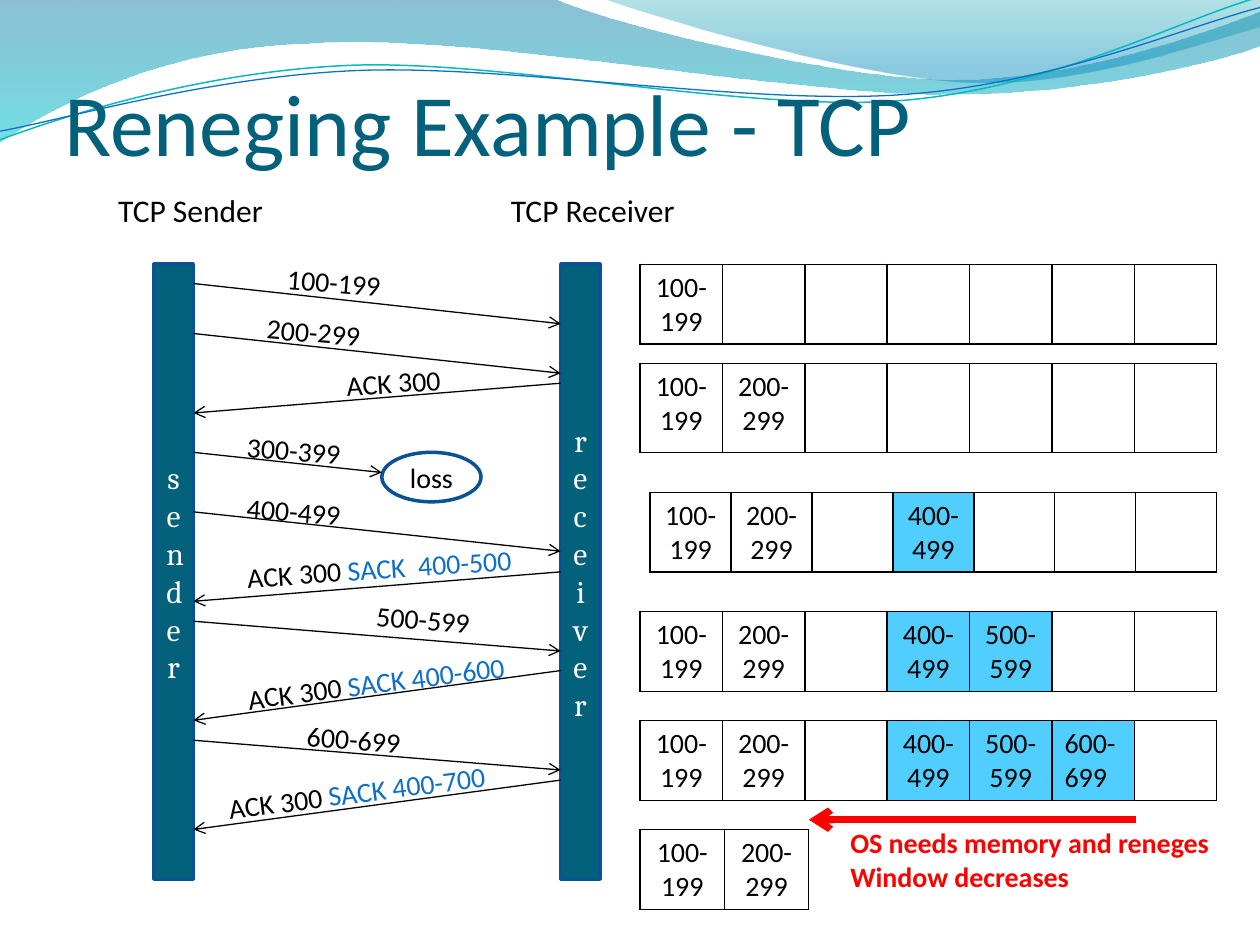
from lxml.etree import SubElement
from pptx import Presentation
from pptx.dml.color import RGBColor
from pptx.enum.shapes import MSO_CONNECTOR, MSO_SHAPE
from pptx.enum.text import MSO_ANCHOR, MSO_AUTO_SIZE, PP_ALIGN
from pptx.oxml.ns import qn
from pptx.util import Pt

THEME = {
    "font": "Calibri", "bar_font": "Cambria",
    "title_size": 50, "size": 18, "small": 16,
    "teal": "04617B", "edge": "0B5292", "black": "000000", "white": "FFFFFF",
    "sack": "0F6FC6", "held": "4FCEFF", "alert": "FF0000",
}

# Waves: start point, then 2-tuples for straight lines and 6-tuples for curves
WAVE_FILLS = [
    ((-0.7, -0.7), [(316.8, -0.7), (342.7, 12.2, 478.1, 45.4, 545.8, 45.4),
                    (614.2, 45.4, 689.8, 18.7, 720, 6.5), (720.7, 25.9),
                    (707.8, 31.7, 626.4, 54.7, 537.1, 54),
                    (447.8, 54, 275, 20.2, 185, 24.5),
                    (92.9, 25.9, 33.1, 59.8, -0.7, 81.4)],
     [(0, "0074A1", 45), (1, "00C6CF", 55)]),
    ((344.9, -0.7), [(366.5, 7.9, 491, 44.6, 553.7, 46.8),
                     (616.3, 49.7, 691.9, 23, 720, 15.1), (720, 0)],
     [(0, "00A1A9", 30), (0.8, "008BBF", 45)]),
]
WAVE_LINES = [
    ((0, 79.9), [(34.6, 67, 113.8, 41, 199.4, 37.4),
                 (284.4, 33.8, 427, 64.1, 513.4, 57.6),
                 (599.8, 51.1, 675.4, 10.8, 718.6, -1.4)], "0AB8BF", 0.85),
    ((0, 74.9), [(33.8, 69.1, 118.1, 43.9, 203.8, 40.3),
                 (290.2, 36.7, 429.8, 60.5, 516.2, 54),
                 (601.9, 48.2, 677.5, 15.1, 720, 4.3)], "0F6FC6", 0.75),
]

BAR_TOP, BAR_WIDTH, BAR_HEIGHT = 151, 22.5, 351.5
SENDER_LEFT, RECEIVER_LEFT = 88, 320.4
LOSS_BOX = (218.2, 258.5, 56.7, 28.3)

# Start y, end y, label, SACK part, label left, top, width, rotation
DATA, ACK, STEEP = 4.6, -3.9, -7.3
MESSAGES = [
    (162, 185, "100-199", "", 157, 148.5, 85, DATA),
    (190.6, 213.3, "200-299", "", 145.4, 177, 85, DATA),
    (219, 236, "ACK 300", "", 190.8, 204.7, 85, ACK),
    (258.5, 270, "300-399", "", 134, 244.8, 85, DATA),
    (292.5, 315, "400-499", "", 134, 279.4, 85, DATA),
    (326.8, 343.6, "ACK 300 ", "SACK  400-500", 134, 310.5, 193.7, ACK),
    (355, 372, "500-599", "", 208, 341.3, 85, DATA),
    (383.2, 411.6, "ACK 300 ", "SACK 400-600", 134, 376.6, 166.3, STEEP),
    (423, 440, "600-699", "", 168.3, 409.7, 85, DATA),
    (445.8, 474, "ACK 300 ", "SACK 400-700", 123, 439.2, 166.3, STEEP),
]
LOST = "300-399"

# Receive buffers: left, top, width, row height, slots, {slot: segment}
FIRST_TWO = {0: "100-199", 1: "200-299"}
BUFFERS = [
    (365.8, 151, 329.4, 45.4, 7, {0: "100-199"}),
    (365.8, 207.6, 329.4, 51, 7, FIRST_TWO),
    (371.5, 281.3, 323.7, 45.4, 7, {**FIRST_TWO, 3: "400-499"}),
    (365.8, 349.4, 329.4, 45.4, 7, {**FIRST_TWO, 3: "400-499", 4: "500-599"}),
    (365.8, 411.8, 329.4, 45.4, 7,
     {**FIRST_TWO, 3: "400-499", 4: "500-599", 5: "600-699"}),
    (365.8, 474, 96.3, 45.4, 2, FIRST_TWO),
]
NOTE = ["OS needs memory and reneges", "Window decreases"]


def color(name):
    return RGBColor.from_string(THEME.get(name, name))


def add_run(paragraph, text, tint="black", size="small", font="font", bold=False):
    run = paragraph.add_run()
    run.text = text
    run.font.name, run.font.size = THEME[font], Pt(THEME[size])
    run.font.color.rgb, run.font.bold = color(tint), bold


def place(shape, left, top, width, height):
    shape.left, shape.top, shape.width, shape.height = map(Pt, (left, top, width, height))


def add_wave(shapes, start, parts, closed):
    """Join the end points, then bend the segments that have control points."""
    builder = shapes.build_freeform(Pt(start[0]), Pt(start[1]))
    builder.add_line_segments([(Pt(part[-2]), Pt(part[-1])) for part in parts], close=closed)
    wave = builder.convert_to_shape()
    wave.shadow.inherit = False
    segments = list(wave.element.spPr.iter(qn("a:lnTo")))
    for segment, part in zip(segments, parts):
        if len(part) == 6:
            segment.tag = qn("a:cubicBezTo")
            for index, (x, y) in enumerate((part[:2], part[2:4])):
                control = segment.makeelement(
                    qn("a:pt"), x=str(Pt(x) - wave.left), y=str(Pt(y) - wave.top))
                segment.insert(index, control)
    return wave


def add_arrow(shapes, x1, y1, x2, y2, tint="black", weight=0.75):
    arrow = shapes.add_connector(MSO_CONNECTOR.STRAIGHT, *map(Pt, (x1, y1, x2, y2)))
    arrow.line.color.rgb, arrow.line.width = color(tint), Pt(weight)
    SubElement(arrow.line._get_or_add_ln(), qn("a:tailEnd"), type="arrow")
    SubElement(arrow.element.spPr, qn("a:effectLst"))


def add_node(shapes, kind, box, text, fill, **style):
    node = shapes.add_shape(kind, *map(Pt, box))
    node.shadow.inherit = False
    node.fill.solid()
    node.fill.fore_color.rgb = color(fill)
    node.line.color.rgb, node.line.width = color("edge"), Pt(2)
    frame = node.text_frame
    frame.word_wrap, frame.vertical_anchor = True, MSO_ANCHOR.MIDDLE
    frame.paragraphs[0].alignment = PP_ALIGN.CENTER
    add_run(frame.paragraphs[0], text, **style)


def add_text_box(shapes, *box):
    text_box = shapes.add_textbox(*map(Pt, box))
    text_box.text_frame.word_wrap = True
    return text_box


def add_buffer(shapes, left, top, width, height, slots, segments):
    table = shapes.add_table(1, slots, *map(Pt, (left, top, width, height))).table
    table.first_row = table.horz_banding = False
    for slot in range(slots):
        table.columns[slot].width = Pt(width / slots)
        cell = table.cell(0, slot)
        properties = cell._tc.get_or_add_tcPr()
        for side in ("a:lnL", "a:lnR", "a:lnT", "a:lnB"):
            border = SubElement(properties, qn(side), w=str(Pt(1)))
            SubElement(SubElement(border, qn("a:solidFill")), qn("a:srgbClr"), val=THEME["black"])
        if slot >= 3 and slot in segments:
            cell.fill.solid()
            cell.fill.fore_color.rgb = color("held")
        else:
            cell.fill.background()
        if slot in segments:
            paragraph = cell.text_frame.paragraphs[0]
            paragraph.alignment = PP_ALIGN.LEFT if slot == 5 else PP_ALIGN.CENTER
            add_run(paragraph, segments[slot])


def main():
    presentation = Presentation()
    presentation.slide_width, presentation.slide_height = Pt(720), Pt(540)
    slide = presentation.slides.add_slide(presentation.slide_layouts[1])
    shapes = slide.shapes
    title, body = shapes.title, slide.placeholders[1]

    # Wave decoration
    for start, parts, stops in WAVE_FILLS:
        wave = add_wave(shapes, start, parts, True)
        wave.line.fill.background()
        wave.fill.gradient()
        wave.fill.gradient_angle = 270
        for stop, (position, tint, _) in zip(wave.fill.gradient_stops, stops):
            stop.position, stop.color.rgb = position, color(tint)
        for node, stop in zip(wave.element.spPr.iter(qn("a:srgbClr")), stops):
            SubElement(node, qn("a:alpha"), val=str(stop[2] * 1000))
    for start, parts, tint, weight in WAVE_LINES:
        wave = add_wave(shapes, start, parts, False)
        wave.fill.background()
        wave.line.color.rgb, wave.line.width = color(tint), Pt(weight)

    # Title and column headings, in front of the waves
    for placeholder in (title, body):
        placeholder.element.getparent().append(placeholder.element)
        placeholder.text_frame.auto_size = MSO_AUTO_SIZE.NONE
        placeholder.text_frame.paragraphs[0].alignment = PP_ALIGN.LEFT
    place(title, 36.7, 32, 648, 67.7)
    frame = title.text_frame
    frame.margin_left = frame.margin_right = frame.margin_bottom = 0
    frame.vertical_anchor = MSO_ANCHOR.BOTTOM
    add_run(frame.paragraphs[0], "Reneging Example - TCP", "teal", "title_size")
    place(body, 23.8, 105.8, 681.8, 419.8)
    heading = body.text_frame.paragraphs[0]
    heading.space_before = Pt(0)
    properties = heading._p.get_or_add_pPr()
    properties.set("marL", str(Pt(36.5)))
    properties.set("indent", "0")
    SubElement(properties, qn("a:buNone"))
    add_run(heading, "TCP Sender", size="size")
    heading = add_text_box(shapes, 284.8, 105.8, 120, 29).text_frame.paragraphs[0]
    add_run(heading, "TCP Receiver", size="size")

    # Sender, receiver and the lost segment
    for left, name in ((SENDER_LEFT, "sender"), (RECEIVER_LEFT, "receiver")):
        add_node(shapes, MSO_SHAPE.RECTANGLE, (left, BAR_TOP, BAR_WIDTH, BAR_HEIGHT),
                 name, "teal", tint="white", size="size", font="bar_font")
    add_node(shapes, MSO_SHAPE.OVAL, LOSS_BOX, "loss", "white")

    # Messages
    sender_side = SENDER_LEFT + BAR_WIDTH
    for y1, y2, label, sack, left, top, width, rotation in MESSAGES:
        x1, x2 = sender_side, LOSS_BOX[0] if label == LOST else RECEIVER_LEFT
        if rotation != DATA:
            x1, x2 = x2, x1
        add_arrow(shapes, x1, y1, x2, y2)
        text_box = add_text_box(shapes, left, top, width, 26.6)
        text_box.rotation = rotation
        paragraph = text_box.text_frame.paragraphs[0]
        add_run(paragraph, label)
        if sack:
            add_run(paragraph, sack, "sack")

    # Receive buffers and the reneging note
    for buffer in BUFFERS:
        add_buffer(shapes, *buffer)
    add_arrow(shapes, 649.4, 468.4, 462.2, 468.4, "alert", 4)
    frame = add_text_box(shapes, 478.8, 468.4, 226.8, 46).text_frame
    for index, line in enumerate(NOTE):
        paragraph = frame.add_paragraph() if index else frame.paragraphs[0]
        add_run(paragraph, line, "alert", bold=True)

    presentation.save("out.pptx")


if __name__ == "__main__":
    main()
